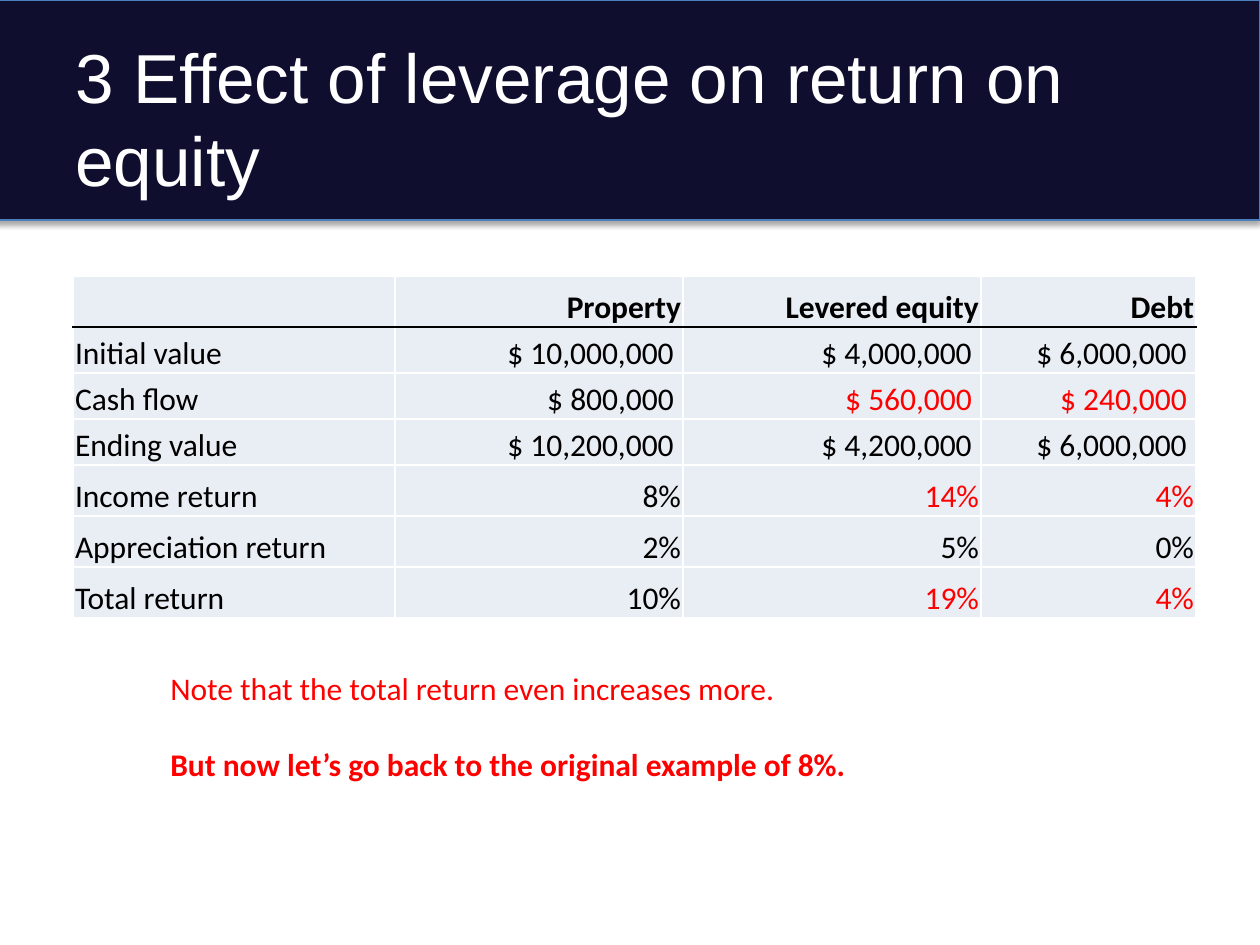
"""Builds a slide on how leverage changes the return on equity."""
from lxml.etree import SubElement
from pptx import Presentation
from pptx.dml.color import RGBColor
from pptx.enum.shapes import MSO_SHAPE
from pptx.enum.text import MSO_ANCHOR, PP_ALIGN
from pptx.oxml.ns import qn
from pptx.util import Inches, Pt

NAVY = RGBColor(0x10, 0x0E, 0x2F)
BLUE = RGBColor(0x4B, 0x7E, 0xBC)
PALE = RGBColor(0xE9, 0xED, 0xF4)
WHITE = RGBColor(0xFF, 0xFF, 0xFF)
BLACK = RGBColor(0x00, 0x00, 0x00)
RED = RGBColor(0xFF, 0x00, 0x00)

COLUMN_WIDTHS = (322, 288, 298, 215)
ROW_HEIGHTS = (51, 46, 46, 46, 51, 51, 51)
RETURNS = (
    ("", "Property", "Levered equity", "Debt"),
    ("Initial value", "$ 10,000,000 ", "$ 4,000,000 ", "$ 6,000,000 "),
    ("Cash flow", "$ 800,000 ", "$ 560,000 ", "$ 240,000 "),
    ("Ending value", "$ 10,200,000 ", "$ 4,200,000 ", "$ 6,000,000 "),
    ("Income return", "8%", "14%", "4%"),
    ("Appreciation return", "2%", "5%", "0%"),
    ("Total return", "10%", "19%", "4%"),
)
CHANGED_CELLS = {(row, column) for row in (2, 4, 6) for column in (2, 3)}


def px(length):
    return round(length * Inches(1) / 126)


def write(paragraph, text, size=18, font="Calibri", color=BLACK, bold=False,
          align=PP_ALIGN.LEFT, before=0):
    paragraph.alignment = align
    paragraph.space_before = Pt(before)
    paragraph.font.size = Pt(size)
    if text:
        run = paragraph.add_run()
        run.text = text
        run.font.size = Pt(size)
        run.font.name = font
        run.font.bold = bold
        run.font.color.rgb = color


class SlideBuilder:
    def __init__(self, slide):
        self.slide = slide

    def band(self, left, top, width, height):
        shape = self.slide.shapes.add_shape(
            MSO_SHAPE.RECTANGLE, px(left), px(top), px(width), px(height))
        shape.fill.solid()
        shape.fill.fore_color.rgb = NAVY
        shape.line.color.rgb = BLUE
        shape.line.width = Pt(0.75)
        shape.shadow.inherit = False
        effects = shape._element.spPr.find(qn("a:effectLst"))
        shadow = SubElement(effects, qn("a:outerShdw"), blurRad=str(Pt(3.1)),
                            dist=str(Pt(1.8)), dir="5400000", rotWithShape="0")
        color = SubElement(shadow, qn("a:srgbClr"), val=str(BLACK))
        SubElement(color, qn("a:alpha"), val="35000")

    def text(self, left, top, width, height, lines, anchor=MSO_ANCHOR.TOP):
        box = self.slide.shapes.add_textbox(px(left), px(top), px(width), px(height))
        frame = box.text_frame
        frame.word_wrap = True
        frame.vertical_anchor = anchor
        for index, (line, style) in enumerate(lines):
            paragraph = frame.add_paragraph() if index else frame.paragraphs[0]
            write(paragraph, line, **style)

    def borders(self, cell, top, bottom):
        properties = cell._tc.get_or_add_tcPr()
        sides = {"lnL": WHITE, "lnR": WHITE, "lnT": top, "lnB": bottom}
        for side, color in sides.items():
            line = SubElement(properties, qn(f"a:{side}"), w=str(Pt(1)))
            fill = SubElement(line, qn("a:solidFill"))
            SubElement(fill, qn("a:srgbClr"), val=str(color))

    def table(self, left, top, rows, widths, heights):
        table = self.slide.shapes.add_table(
            len(rows), len(widths), px(left), px(top),
            px(sum(widths)), px(sum(heights))).table
        for column, width in zip(table.columns, widths):
            column.width = px(width)
        for row, height in zip(table.rows, heights):
            row.height = px(height)
        for row, values in enumerate(rows):
            for column, value in enumerate(values):
                cell = table.cell(row, column)
                self.borders(cell, top=BLACK if row == 1 else WHITE,
                             bottom=BLACK if row == 0 else WHITE)
                cell.fill.solid()
                cell.fill.fore_color.rgb = PALE
                cell.vertical_anchor = MSO_ANCHOR.BOTTOM
                cell.margin_left = cell.margin_right = cell.margin_top = px(2)
                cell.margin_bottom = 0
                write(cell.text_frame.paragraphs[0], value, bold=row == 0,
                      color=RED if (row, column) in CHANGED_CELLS else BLACK,
                      align=PP_ALIGN.RIGHT if column else PP_ALIGN.LEFT)


def main():
    presentation = Presentation()
    presentation.slide_width = px(1260)
    presentation.slide_height = px(945)
    builder = SlideBuilder(presentation.slides.add_slide(presentation.slide_layouts[6]))
    builder.band(-5, 0, 1265, 220)
    builder.text(63, 38, 1134, 158, [
        ("3 Effect of leverage on return on equity",
         {"size": 39.6, "font": "Arial", "color": WHITE}),
    ], anchor=MSO_ANCHOR.MIDDLE)
    builder.table(73, 276, RETURNS, COLUMN_WIDTHS, ROW_HEIGHTS)
    builder.text(158, 663, 732, 127, [
        ("Note that the total return even increases more.", {"color": RED}),
        ("But now let’s go back to the original example of 8%.",
         {"color": RED, "bold": True, "before": 22}),
    ])
    presentation.save("out.pptx")


if __name__ == "__main__":
    main()
